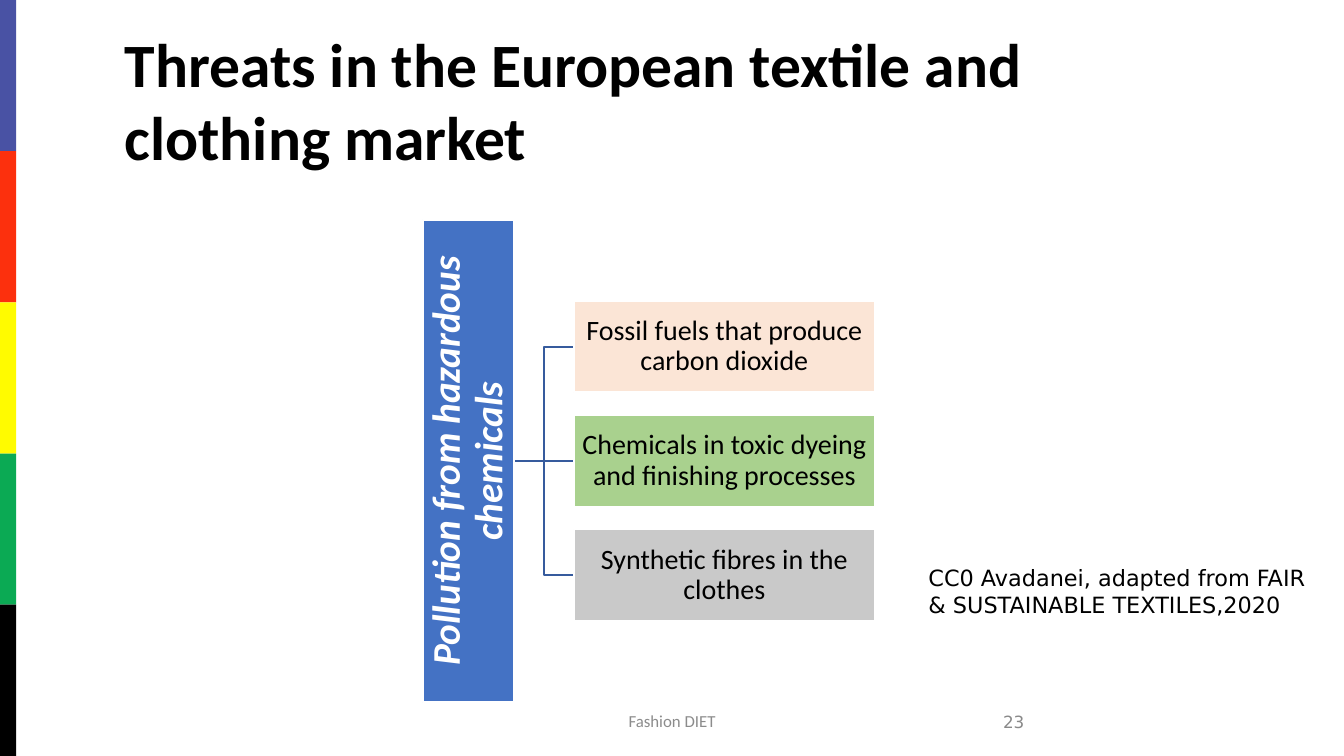
from dataclasses import dataclass
from typing import Any

from pptx import Presentation
from pptx import util as u
from pptx.dml.color import RGBColor
from pptx.enum import shapes, text

SLIDE_WIDTH = 10
SLIDE_HEIGHT = SLIDE_WIDTH * 9 / 16


def color(value):
    return RGBColor.from_string(value)


def write(shape, content, *, size, font="Calibri", hex_color="000000", bold=False,
          italic=False, align=text.PP_ALIGN.LEFT, anchor=text.MSO_ANCHOR.TOP,
          spacing=None, inset=None):
    frame = shape.text_frame
    frame.word_wrap = True
    frame.vertical_anchor = anchor
    if inset is not None:
        frame.margin_left = frame.margin_right = u.Inches(inset)
        frame.margin_top = frame.margin_bottom = u.Inches(inset)
    paragraph = frame.paragraphs[0]
    paragraph.alignment = align
    if spacing is not None:
        paragraph.line_spacing = spacing
    run = paragraph.add_run()
    run.text = content
    run.font.size = u.Pt(size)
    run.font.name = font
    run.font.bold = bold
    run.font.italic = italic
    run.font.color.rgb = color(hex_color)


@dataclass
class SlideBuilder:
    slide: Any
    line_color: str = "365B9D"
    border_color: str = "FFFFFF"
    line_width: float = 1

    def band(self, left, top, width, height, fill):
        shape = self.slide.shapes.add_shape(
            shapes.MSO_SHAPE.RECTANGLE,
            u.Inches(left), u.Inches(top), u.Inches(width), u.Inches(height))
        shape.shadow.inherit = False
        shape.fill.solid()
        shape.fill.fore_color.rgb = color(fill)
        shape.line.fill.background()
        return shape

    def box(self, left, top, width, height, fill, content, rotation=0, **style):
        shape = self.band(left, top, width, height, fill)
        shape.rotation = rotation
        shape.line.color.rgb = color(self.border_color)
        shape.line.width = u.Pt(self.line_width)
        write(shape, content, align=text.PP_ALIGN.CENTER,
              anchor=text.MSO_ANCHOR.MIDDLE, spacing=0.9, inset=0.01, **style)

    def label(self, left, top, width, height, content, **style):
        shape = self.slide.shapes.add_textbox(
            u.Inches(left), u.Inches(top), u.Inches(width), u.Inches(height))
        write(shape, content, **style)

    def branch(self, points):
        start, *rest = [(u.Inches(x), u.Inches(y)) for x, y in points]
        builder = self.slide.shapes.build_freeform(*start)
        builder.add_line_segments(rest, close=False)
        shape = builder.convert_to_shape()
        shape.shadow.inherit = False
        shape.fill.background()
        shape.line.color.rgb = color(self.line_color)
        shape.line.width = u.Pt(self.line_width)


def main():
    presentation = Presentation()
    presentation.slide_width = u.Inches(SLIDE_WIDTH)
    presentation.slide_height = u.Inches(SLIDE_HEIGHT)
    slide = presentation.slides.add_slide(presentation.slide_layouts[6])
    builder = SlideBuilder(slide)

    band_colors = ["4952A4", "FC300D", "FFFB00", "0BAA54", "000000"]
    band_height = SLIDE_HEIGHT / len(band_colors)
    for index, fill in enumerate(band_colors):
        builder.band(0, index * band_height, 0.12, band_height, fill)

    builder.label(3.31, 5.21, 3.38, 0.3, "Fashion DIET", size=9, hex_color="8C8C8C",
                  align=text.PP_ALIGN.CENTER, anchor=text.MSO_ANCHOR.MIDDLE)
    builder.label(5.47, 5.22, 2.25, 0.3, "23", size=9, font="DejaVu Sans",
                  hex_color="898989", align=text.PP_ALIGN.RIGHT,
                  anchor=text.MSO_ANCHOR.MIDDLE)
    builder.label(0.83, 0.14, 7.8, 1.21,
                  "Threats in the European textile and clothing market",
                  size=33, bold=True)

    threats = [
        ("Fossil fuels that produce carbon dioxide", "FBE5D6"),
        ("Chemicals in toxic dyeing and finishing processes", "A9D18E"),
        ("Synthetic fibres in the clothes", "C9C9C9"),
    ]
    root_right, elbow, threat_left = 3.82, 4.05, 4.27
    root_length, box_width, box_height = 3.59, 2.24, 0.68
    middle, pitch = 3.43, 0.85
    centers = [middle + (index - 1) * pitch for index in range(len(threats))]

    for center in reversed(centers):
        if center == middle:
            points = [(root_right, middle), (threat_left, middle)]
        else:
            points = [(root_right, middle), (elbow, middle),
                      (elbow, center), (threat_left, center)]
        builder.branch(points)
    builder.box(1.69, middle - box_height / 2, root_length, box_height, "4472C4",
                "Pollution from hazardous chemicals", rotation=270,
                size=21, hex_color="FFFFFF", bold=True, italic=True)
    for center, (content, fill) in zip(centers, threats):
        builder.box(threat_left, center - box_height / 2, box_width, box_height,
                    fill, content, size=15)

    builder.label(6.81, 4.15, 3.07, 0.5,
                  "CC0 Avadanei, adapted from FAIR & SUSTAINABLE TEXTILES,2020",
                  size=12, font="DejaVu Sans")

    presentation.save("out.pptx")


if __name__ == "__main__":
    main()
